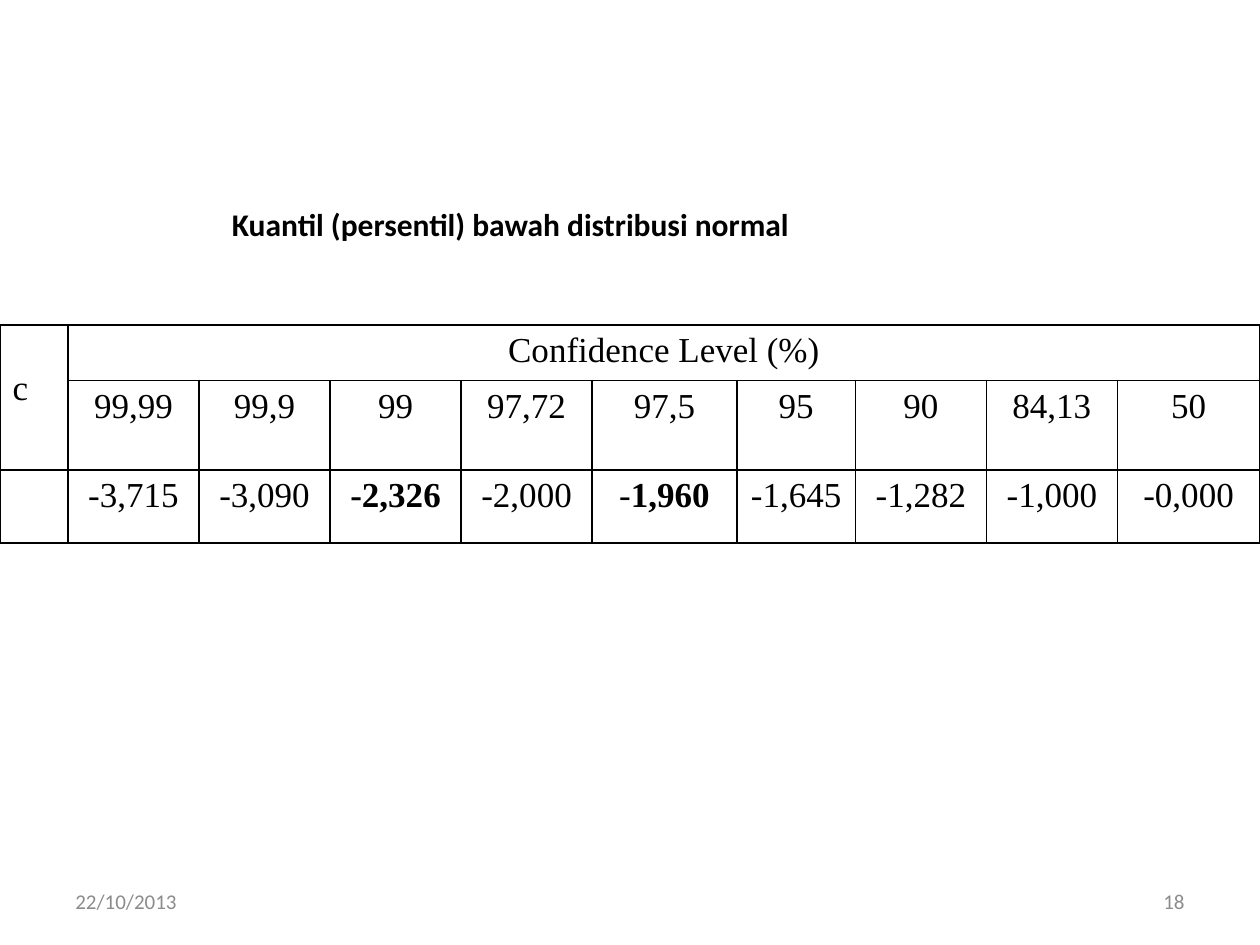
import dataclasses
import pptx
import pptx.util
import pptx.dml.color
import pptx.enum.text
import pptx.oxml
import pptx.oxml.ns

Inches = pptx.util.Inches
Pt = pptx.util.Pt
Align = pptx.enum.text.PP_ALIGN
Anchor = pptx.enum.text.MSO_ANCHOR


@dataclasses.dataclass
class Theme:
    ink: str = "000000"
    grey: str = "8C8C8C"
    sans: str = "Calibri"
    serif: str = "Times New Roman"
    head: int = 18
    body: int = 20
    foot: int = 12
    rule: int = 1


class Deck:
    def __init__(self, theme):
        self.theme = theme
        self.show = pptx.Presentation()
        self.show.slide_width = Inches(10)
        self.show.slide_height = Inches(7.5)
        self.slide = self.show.slides.add_slide(self.show.slide_layouts[5])

    def label(self, frame, runs, size, font, color, align):
        para = frame.paragraphs[0]
        para.alignment = align
        for text, bold in runs:
            run = para.add_run()
            run.text = text
            run.font.size = Pt(size)
            run.font.name = font
            run.font.bold = bold
            run.font.color.rgb = pptx.dml.color.RGBColor.from_string(color)

    def title(self, text, left, top, width, height):
        shape = self.slide.shapes.title
        shape.left, shape.top = Inches(left), Inches(top)
        shape.width, shape.height = Inches(width), Inches(height)
        frame = shape.text_frame
        frame.word_wrap = True
        frame.auto_size = pptx.enum.text.MSO_AUTO_SIZE.NONE
        frame.vertical_anchor = Anchor.TOP
        look = self.theme
        self.label(frame, [(text, True)], look.head, look.sans, look.ink, Align.LEFT)

    def footer(self, text, left, align):
        box = self.slide.shapes.add_textbox(
            Inches(left), Inches(6.95), Inches(2.33), Inches(0.4))
        frame = box.text_frame
        frame.word_wrap = True
        frame.vertical_anchor = Anchor.MIDDLE
        look = self.theme
        self.label(frame, [(text, False)], look.foot, look.sans, look.grey, align)

    def table(self, left, top, cols, rows):
        frame = self.slide.shapes.add_table(
            len(rows), len(cols), Inches(left), Inches(top),
            Inches(sum(cols)), Inches(sum(rows)))
        grid = frame.table
        grid.first_row = grid.horz_banding = False
        for col, width in zip(grid.columns, cols):
            col.width = Inches(width)
        for row, height in zip(grid.rows, rows):
            row.height = Inches(height)
        for cell in grid.iter_cells():
            self.border(cell)
            cell.fill.background()
        return grid

    def border(self, cell):
        props = cell._tc.get_or_add_tcPr()
        for side in ("lnL", "lnR", "lnT", "lnB"):
            props.append(pptx.oxml.parse_xml(
                f'<a:{side} {pptx.oxml.ns.nsdecls("a")} w="{Pt(self.theme.rule)}">'
                f'<a:solidFill><a:srgbClr val="{self.theme.ink}"/></a:solidFill>'
                f'</a:{side}>'))

    def cell(self, grid, row, col, runs, align=Align.CENTER):
        look = self.theme
        frame = grid.cell(row, col).text_frame
        self.label(frame, runs, look.body, look.serif, look.ink, align)


def main():
    deck = Deck(Theme())
    deck.title("Kuantil (persentil) bawah distribusi normal", 1.74, 1.58, 6.42, 0.5)

    cols = [0.54, 1.04, 1.04, 1.04, 1.04, 1.15, 0.94, 1.04, 1.04, 1.13]
    grid = deck.table(0, 2.58, cols, [0.44, 0.71, 0.58])
    grid.cell(0, 0).merge(grid.cell(1, 0))
    grid.cell(0, 1).merge(grid.cell(0, len(cols) - 1))
    grid.cell(0, 0).margin_top = Inches(0.35)
    deck.cell(grid, 0, 0, [("c", False)], Align.LEFT)
    deck.cell(grid, 0, 1, [("Confidence Level (%)", False)])

    levels = ["99,99", "99,9", "99", "97,72", "97,5", "95", "90", "84,13", "50"]
    scores = [
        [("-3,715", False)], [("-3,090", False)], [("-2,326", True)],
        [("-2,000", False)], [("-", False), ("1,960", True)],
        [("-1,645", False)], [("-1,282", False)], [("-1,000", False)],
        [("-0,000", False)],
    ]
    for col, (level, score) in enumerate(zip(levels, scores), 1):
        deck.cell(grid, 1, col, [(level, False)])
        deck.cell(grid, 2, col, score)

    deck.footer("22/10/2013", 0.5, Align.LEFT)
    deck.footer("18", 7.17, Align.RIGHT)
    deck.show.save("out.pptx")


if __name__ == "__main__":
    main()
